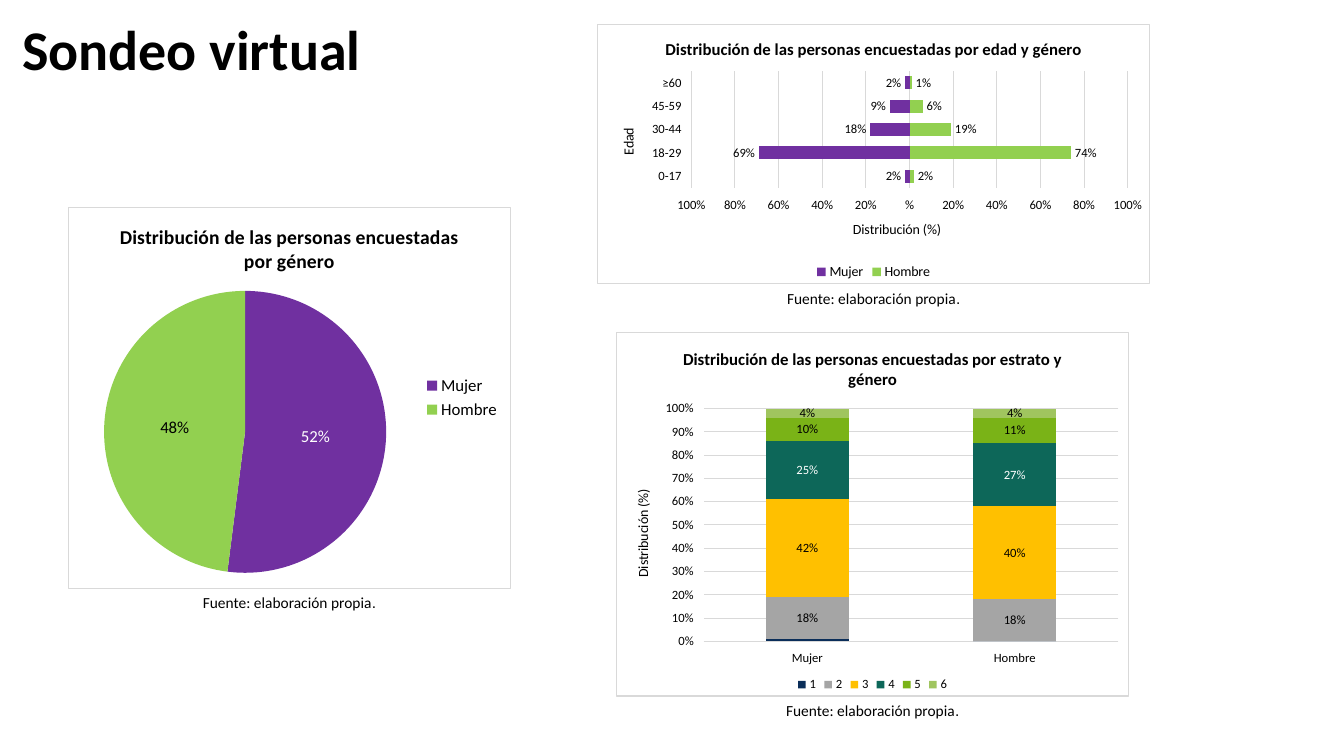
from dataclasses import dataclass
from lxml import etree
from pptx import Presentation, util as u
from pptx.chart.data import CategoryChartData
from pptx.dml.color import RGBColor
from pptx.enum import chart as ch, text as tx
from pptx.oxml import parse_xml
from pptx.oxml.ns import nsdecls, qn


@dataclass(frozen=True)
class Theme:
    face: str = "Calibri"
    stop_face: str = "Arial"
    ink: str = "000000"
    paper: str = "FFFFFF"
    rule: str = "D9D9D9"
    woman: str = "7030A0"
    man: str = "92D050"
    strata: tuple = ("0B2E59", "A5A5A5", "FFC000", "0D6759", "7AB317", "A0C55F")
    heading: int = 40
    source: int = 11
    hairline: float = 0.75


THEME = Theme()
HEADING = "Sondeo virtual"
HEADING_FRAME = (0.9, 0.13, 86.27, 13.47)
SOURCE = ("Fuente: elaboración propia", ".")
SOURCE_SIZE = (20.93, 3.87)
GENDERS = ("Mujer", "Hombre")
SIGNLESS = "##%;##%"
PERCENT = "0%"
LABEL = ch.XL_LABEL_POSITION
LEGEND = ch.XL_LEGEND_POSITION

STRATA_SHARES = ((0.01, 0), (0.18, 0.18), (0.42, 0.4),
                 (0.25, 0.27), (0.1, 0.11), (0.04, 0.04))
PALE_STRATUM = 3
UNLABELLED_STRATUM = 0

CHARTS = [
    dict(kind=ch.XL_CHART_TYPE.PIE,
         title="Distribución de las personas encuestadas por género",
         frame=(5.03, 27.33, 33.01, 50.53), plot=(0.08, 0.22, 0.64, 0.74),
         sizes=dict(title=14, legend=12, label=12, axis_title=12),
         legend=LEGEND.RIGHT, categories=GENDERS,
         slices=(THEME.woman, THEME.man),
         series=[("Series 1", (0.52, 0.48), None, THEME.ink, PERCENT)],
         label_place=LABEL.CENTER),
    dict(kind=ch.XL_CHART_TYPE.BAR_CLUSTERED,
         title="Distribución de las personas encuestadas por edad y género",
         frame=(44.41, 3.2, 41.19, 34.4), plot=(0.17, 0.18, 0.79, 0.45),
         sizes=dict(title=12, legend=10, label=9, axis_title=10),
         legend=LEGEND.BOTTOM,
         categories=("0-17", "18-29", "30-44", "45-59", "≥60"),
         series=[("Hombre", (0.02, 0.74, 0.19, 0.06, 0.01),
                  THEME.man, THEME.ink, PERCENT),
                 ("Mujer", (-0.02, -0.69, -0.18, -0.09, -0.02),
                  THEME.woman, THEME.ink, SIGNLESS)],
         label_place=LABEL.OUTSIDE_END, gap=80,
         category_title="Edad", value_title="Distribución (%)",
         value_format=SIGNLESS,
         scale=dict(minimum_scale=-1, maximum_scale=1, major_unit=0.2)),
    dict(kind=ch.XL_CHART_TYPE.COLUMN_STACKED_100,
         title="Distribución de las personas encuestadas por estrato y género",
         frame=(45.84, 43.87, 38.18, 48.27), plot=(0.17, 0.21, 0.81, 0.64),
         sizes=dict(title=12, legend=9, label=9, axis_title=10),
         legend=LEGEND.BOTTOM, categories=GENDERS,
         series=[(str(n + 1), shares, THEME.strata[n],
                  None if n == UNLABELLED_STRATUM else
                  THEME.paper if n == PALE_STRATUM else THEME.ink, PERCENT)
                 for n, shares in enumerate(STRATA_SHARES)],
         label_place=LABEL.CENTER, gap=150,
         value_title="Distribución (%)", value_format=PERCENT,
         scale=dict(major_unit=0.1)),
]

deck = Presentation()
deck.slide_width, deck.slide_height = u.Inches(13.33), u.Inches(7.5)
slide = deck.slides.add_slide(deck.slide_layouts[5])


def place(frame):
    spans = (deck.slide_width, deck.slide_height) * 2
    return [round(share * span / 100) for share, span in zip(frame, spans)]


def assign(target, values):
    for name, value in values.items():
        setattr(target, name, value)


def style(font, size, color=THEME.ink, bold=False, face=THEME.face):
    assign(font, dict(size=u.Pt(size), bold=bold, name=face))
    font.color.rgb = RGBColor.from_string(color)


def paint(fill, color):
    fill.solid()
    fill.fore_color.rgb = RGBColor.from_string(color)


def rule(line):
    paint(line.fill, THEME.rule)
    line.width = u.Pt(THEME.hairline)


def write_title(owner, words, size, bold):
    paragraph = owner.text_frame.paragraphs[0]
    run = paragraph.add_run()
    run.text = words
    style(run.font, size, bold=bold)


def frame_chart(chart, plot):
    space = chart._chartSpace
    space.find(qn("c:chart")).addnext(parse_xml(
        f'<c:spPr {nsdecls("c", "a")}><a:solidFill><a:srgbClr val="{THEME.paper}"/></a:solidFill>'
        f'<a:ln w="{u.Pt(THEME.hairline)}"><a:solidFill><a:srgbClr val="{THEME.rule}"/>'
        '</a:solidFill></a:ln></c:spPr>'))
    area = space.find(".//" + qn("c:plotArea"))
    for earlier in area.findall(qn("c:layout")):
        area.remove(earlier)
    layout = etree.Element(qn("c:layout"))
    manual = etree.SubElement(layout, qn("c:manualLayout"))
    settings = [("layoutTarget", "inner"), ("xMode", "edge"), ("yMode", "edge")]
    for tag, value in settings + list(zip("xywh", plot)):
        etree.SubElement(manual, qn("c:" + tag)).set("val", str(value))
    area.insert(0, layout)


def format_axes(chart, facts):
    titles = (facts.get("category_title"), facts["value_title"])
    for axis, words in zip((chart.category_axis, chart.value_axis), titles):
        assign(axis, dict(major_tick_mark=ch.XL_TICK_MARK.NONE,
                          minor_tick_mark=ch.XL_TICK_MARK.NONE,
                          tick_label_position=ch.XL_TICK_LABEL_POSITION.LOW,
                          has_title=bool(words)))
        style(axis.tick_labels.font, facts["sizes"]["label"])
        if words:
            write_title(axis.axis_title, words, facts["sizes"]["axis_title"], False)
    rule(chart.category_axis.format.line)
    values = chart.value_axis
    values.format.line.fill.background()
    rule(values.major_gridlines.format.line)
    assign(values, facts["scale"])
    assign(values.tick_labels, dict(number_format=facts["value_format"],
                                    number_format_is_linked=False))
    assign(chart.plots[0], dict(gap_width=facts["gap"], overlap=100))


def format_series(series, facts, color, label_color, number_format):
    size = facts["sizes"]["label"]
    if color:
        paint(series.format.fill, color)
        series.invert_if_negative = False
    if label_color:
        labels = series.data_labels
        assign(labels, dict(show_value=True, position=facts["label_place"],
                            number_format=number_format,
                            number_format_is_linked=False))
        style(labels.font, size, label_color)
    for index, slice_color in enumerate(facts.get("slices", ())):
        paint(series.points[index].format.fill, slice_color)
    if "slices" in facts:
        first_label = series.points[0].data_label
        style(first_label.font, size, THEME.paper)
        first_label.position = facts["label_place"]


def add_survey_chart(facts):
    data = CategoryChartData(number_format=PERCENT)
    data.categories = facts["categories"]
    for name, shares, *_ in facts["series"]:
        data.add_series(name, shares)
    chart = slide.shapes.add_chart(facts["kind"], *place(facts["frame"]), data).chart
    sizes = facts["sizes"]
    style(chart.font, sizes["axis_title"])
    assign(chart, dict(has_title=True, has_legend=True))
    write_title(chart.chart_title, facts["title"], sizes["title"], True)
    chart.chart_title.include_in_layout = False
    assign(chart.legend, dict(position=facts["legend"], include_in_layout=False))
    style(chart.legend.font, sizes["legend"])
    chart.plots[0].vary_by_categories = "slices" in facts
    for series, (_, _, *look) in zip(chart.plots[0].series, facts["series"]):
        format_series(series, facts, *look)
    if "slices" not in facts:
        format_axes(chart, facts)
    frame_chart(chart, facts["plot"])


def add_source(frame):
    left, top, width, height = frame
    source_width, source_height = SOURCE_SIZE
    spot = (left + (width - source_width) / 2, top + height, source_width, source_height)
    note = slide.shapes.add_textbox(*place(spot)).text_frame
    assign(note, dict(word_wrap=True, auto_size=tx.MSO_AUTO_SIZE.SHAPE_TO_FIT_TEXT))
    line = note.paragraphs[0]
    line.alignment = tx.PP_ALIGN.CENTER
    for words, face in zip(SOURCE, (THEME.face, THEME.stop_face)):
        run = line.add_run()
        run.text = words
        style(run.font, THEME.source, face=face)


heading = slide.shapes.title
assign(heading, dict(zip(("left", "top", "width", "height"), place(HEADING_FRAME))))
heading.text_frame.vertical_anchor = tx.MSO_ANCHOR.MIDDLE
write_title(heading, HEADING, THEME.heading, True)
assign(heading.text_frame.paragraphs[0],
       dict(alignment=tx.PP_ALIGN.LEFT, line_spacing=0.9))
for facts in CHARTS:
    add_survey_chart(facts)
    add_source(facts["frame"])
deck.save("out.pptx")
